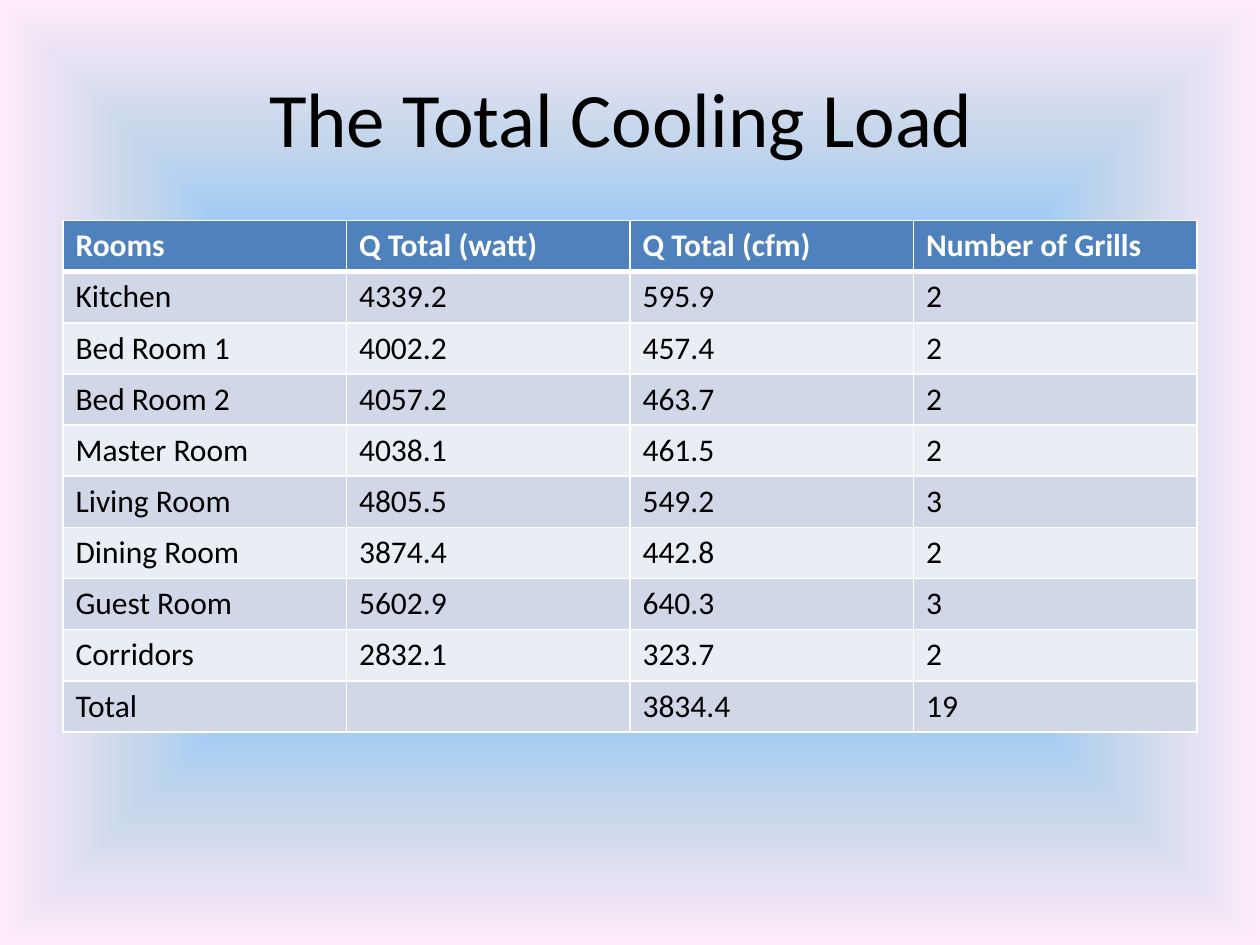
import lxml.etree
import pptx
import pptx.dml.color
import pptx.enum.text
import pptx.oxml
import pptx.oxml.ns
import pptx.util

Inches = pptx.util.Inches
FONT = "Calibri"
WHITE, BLACK = "FFFFFF", "000000"
HEADER_FILL = "4F81BD"
BAND_FILLS = ("D0D8E8", "E9EDF4")
BACKGROUND_STOPS = ((0, "5E9EFF"), (40, "85C2FF"), (70, "C4D6EB"), (100, "FFEBFA"))
COOLING_LOADS = (
    ("Rooms", "Q Total (watt)", "Q Total (cfm)", "Number of Grills"),
    ("Kitchen", "4339.2", "595.9", "2"),
    ("Bed Room 1", "4002.2", "457.4", "2"),
    ("Bed Room 2", "4057.2", "463.7", "2"),
    ("Master Room", "4038.1", "461.5", "2"),
    ("Living Room", "4805.5", "549.2", "3"),
    ("Dining Room", "3874.4", "442.8", "2"),
    ("Guest Room", "5602.9", "640.3", "3"),
    ("Corridors", "2832.1", "323.7", "2"),
    ("Total", "", "3834.4", "19"),
)


def color(hex_string):
    return pptx.dml.color.RGBColor.from_string(hex_string)


def add_run(paragraph, text, size, hex_string, bold=False):
    run = paragraph.add_run()
    run.text = text
    run.font.name = FONT
    run.font.size = pptx.util.Pt(size)
    run.font.bold = bold
    run.font.color.rgb = color(hex_string)


def sub_element(parent, tag, **attributes):
    values = {name: str(value) for name, value in attributes.items()}
    return lxml.etree.SubElement(parent, pptx.oxml.ns.qn(tag), values)


def set_background(slide):
    """Gradient that spreads from the centre to the slide edges."""
    slide.background.fill.gradient()
    gradient = slide.element.find(".//" + pptx.oxml.ns.qn("a:gradFill"))
    for child in list(gradient):
        gradient.remove(child)
    stops = sub_element(gradient, "a:gsLst")
    for position, hex_string in BACKGROUND_STOPS:
        stop = sub_element(stops, "a:gs", pos=position * 1000)
        sub_element(stop, "a:srgbClr", val=hex_string)
    shade = sub_element(gradient, "a:path", path="shape")
    sub_element(shade, "a:fillToRect", l=50000, t=50000, r=50000, b=50000)


def set_borders(cell, bottom_width):
    """White cell borders; they have to come before the fill."""
    properties = cell._tc.get_or_add_tcPr()
    widths = {"a:lnL": 1, "a:lnR": 1, "a:lnT": 1, "a:lnB": bottom_width}
    for index, (tag, width) in enumerate(widths.items()):
        line = sub_element(properties, tag, w=pptx.util.Pt(width))
        sub_element(sub_element(line, "a:solidFill"), "a:srgbClr", val=WHITE)
        properties.insert(index, line)


def add_title(slide, left, top, width, height):
    frame = slide.shapes.add_textbox(left, top, width, height).text_frame
    frame.word_wrap = True
    frame.vertical_anchor = pptx.enum.text.MSO_ANCHOR.MIDDLE
    paragraph = frame.paragraphs[0]
    paragraph.alignment = pptx.enum.text.PP_ALIGN.CENTER
    add_run(paragraph, "The Total Cooling Load ", 44, BLACK)


def add_load_table(slide, left, top, width, height):
    row_count, column_count = len(COOLING_LOADS), len(COOLING_LOADS[0])
    table = slide.shapes.add_table(
        row_count, column_count, left, top, width, height).table
    for row_index, row in enumerate(COOLING_LOADS):
        is_header = row_index == 0
        fill = HEADER_FILL if is_header else BAND_FILLS[(row_index - 1) % 2]
        # The line under the header is heavier, on both sides of the edge
        for column_index, text in enumerate(row):
            cell = table.cell(row_index, column_index)
            cell.fill.solid()
            cell.fill.fore_color.rgb = color(fill)
            set_borders(cell, 3 if is_header else 1)
            paragraph = cell.text_frame.paragraphs[0]
            paragraph.font.size = pptx.util.Pt(18)
            if text:
                add_run(paragraph, text, 18, WHITE if is_header else BLACK, is_header)


def main():
    presentation = pptx.Presentation()
    presentation.slide_width = Inches(10)
    presentation.slide_height = Inches(7.5)
    slide = presentation.slides.add_slide(presentation.slide_layouts[6])
    set_background(slide)
    add_title(slide, Inches(0.5), Inches(0.3), Inches(9), Inches(1.25))
    add_load_table(slide, Inches(0.5), Inches(1.75), Inches(9), Inches(4.06))
    presentation.save("out.pptx")


if __name__ == "__main__":
    main()
